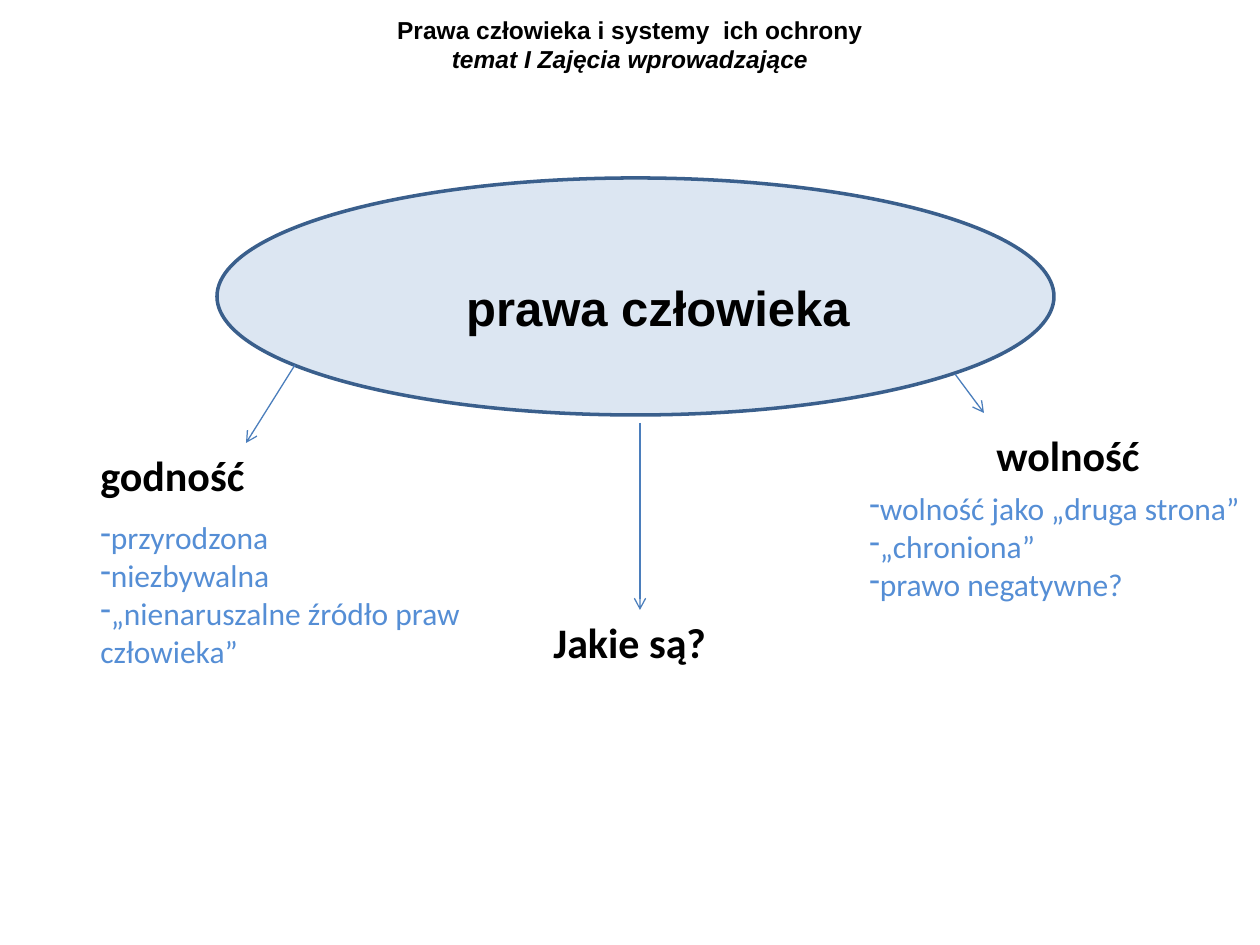
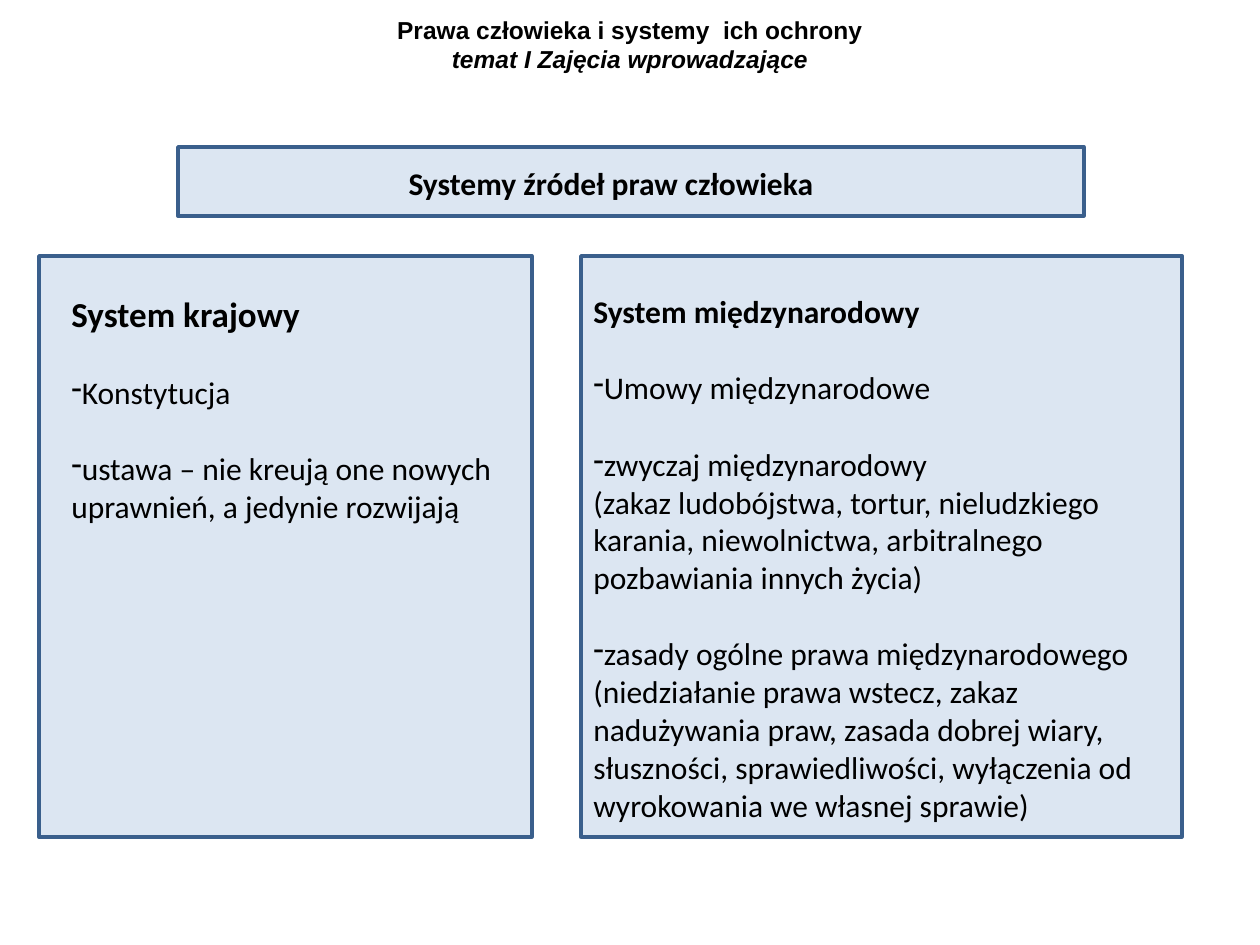
"""Build two slides on human rights: a concept map and the systems of sources."""
import pptx
import pptx.dml.color
import pptx.enum.shapes
import pptx.enum.text
import pptx.oxml.ns
import pptx.util
from lxml import etree

SHAPE = pptx.enum.shapes.MSO_SHAPE
ALIGN = pptx.enum.text.PP_ALIGN
FIT = pptx.enum.text.MSO_AUTO_SIZE
TOP = pptx.enum.text.MSO_ANCHOR.TOP
qn = pptx.oxml.ns.qn
SCALE = 914400 / 126

THEME = {
    "fill": "DCE6F2", "edge": "3A5F8C", "arrow": "4B7EBC",
    "edge_pt": 2, "arrow_pt": 0.75, "gap_pt": 22, "title_top": 15,
    "styles": {
        "title": {"name": "Arial", "size": 14, "bold": True, "italic": False, "color": "000000"},
        "topic": {"name": "Arial", "size": 14, "bold": True, "italic": True, "color": "000000"},
        "core": {"name": "Arial", "size": 28, "bold": True, "color": "000000"},
        "head": {"name": "Calibri", "size": 24, "bold": True, "color": "000000"},
        "large": {"name": "Calibri", "size": 20, "bold": True, "color": "000000"},
        "label": {"name": "Calibri", "size": 18, "bold": True, "color": "000000"},
        "body": {"name": "Calibri", "size": 18, "bold": False, "color": "000000"},
        "note": {"name": "Calibri", "size": 18, "bold": False, "color": "558ED5"},
    },
}

TITLE = [("Prawa człowieka i systemy  ich ochrony", "title"),
         ("temat I Zajęcia wprowadzające", "topic")]

SLIDES = [
    {
        "shapes": [(SHAPE.OVAL, (217, 178, 837, 237))],
        "arrows": [(295, 365, 246, 443), (640, 423, 640, 610), (955, 374, 984, 413)],
        "texts": [
            {"box": (217, 271, 882, 242), "align": ALIGN.CENTER,
             "lines": [("prawa człowieka", "core")]},
            {"box": (88, 443, 413, 63), "lines": [("godność", "head")]},
            {"box": (984, 423, 276, 63), "lines": [("wolność", "head")]},
            {"box": (541, 610, 532, 63), "lines": [("Jakie są?", "head")]},
            {"box": (88, 512, 403, 165), "lines": [
                ("przyrodzona", "note", "dash"),
                ("niezbywalna", "note", "dash"),
                ("„nienaruszalne źródło praw człowieka”", "note", "dash")]},
            {"box": (857, 483, 403, 127), "lines": [
                ("wolność jako „druga strona”", "note", "dash"),
                ("„chroniona”", "note", "dash"),
                ("prawo negatywne?", "note", "dash")]},
        ],
    },
    {
        "shapes": [(SHAPE.RECTANGLE, (178, 147, 906, 69)),
                   (SHAPE.RECTANGLE, (39, 256, 493, 581)),
                   (SHAPE.RECTANGLE, (581, 256, 601, 581))],
        "arrows": [],
        "texts": [
            {"box": (207, 158, 808, 50), "align": ALIGN.CENTER,
             "lines": [("Systemy źródeł praw człowieka", "label")]},
            {"box": (59, 286, 452, 246), "lines": [
                ("System krajowy", "large"),
                ("Konstytucja", "body", "dash", "gap"),
                ("ustawa – nie kreują one nowych uprawnień, a jedynie rozwijają",
                 "body", "dash", "gap")]},
            {"box": (581, 286, 591, 557), "lines": [
                ("System międzynarodowy", "label"),
                ("Umowy międzynarodowe", "body", "dash", "gap"),
                ("zwyczaj międzynarodowy", "body", "dash", "gap"),
                ("(zakaz ludobójstwa, tortur, nieludzkiego karania, niewolnictwa, "
                 "arbitralnego pozbawiania innych życia)", "body"),
                ("zasady ogólne prawa międzynarodowego (niedziałanie prawa wstecz, zakaz "
                 "nadużywania praw, zasada dobrej wiary, słuszności, sprawiedliwości, "
                 "wyłączenia od wyrokowania we własnej sprawie)", "body", "dash", "gap")]},
        ],
    },
]


def px(*nums):
    return [pptx.util.Emu(round(num * SCALE)) for num in nums]


def rgb(code):
    return pptx.dml.color.RGBColor.from_string(code)


def put(item, vals):
    for key, val in vals.items():
        setattr(item, key, val)


def write(para, text, style):
    look = dict(THEME["styles"][style])
    run = para.add_run()
    run.text = text
    run.font.color.rgb = rgb(look.pop("color"))
    look["size"] = pptx.util.Pt(look["size"])
    put(run.font, look)


def dash(para):
    prop = para._p.get_or_add_pPr()
    put_attrs = {"marL": "0", "indent": "0"}
    for key, val in put_attrs.items():
        prop.set(key, val)
    etree.SubElement(prop, qn("a:buFontTx"))
    etree.SubElement(prop, qn("a:buChar")).set("char", "-")


def add_title(slide):
    title = slide.shapes.title
    put(title, dict(zip(("left", "top", "width", "height"), px(0, 0, 1260, 118))))
    frame = title.text_frame
    put(frame, {"auto_size": FIT.NONE, "word_wrap": True, "vertical_anchor": TOP,
                "margin_top": px(THEME["title_top"])[0]})
    para = frame.paragraphs[0]
    para.alignment = ALIGN.CENTER
    for num, line in enumerate(TITLE):
        if num:
            para.add_line_break()
        write(para, *line)


def add_form(slide, kind, box):
    form = slide.shapes.add_shape(kind, *px(*box))
    form.shadow.inherit = False
    form.fill.solid()
    form.fill.fore_color.rgb = rgb(THEME["fill"])
    form.line.color.rgb = rgb(THEME["edge"])
    form.line.width = pptx.util.Pt(THEME["edge_pt"])


def add_arrow(slide, ends):
    kind = pptx.enum.shapes.MSO_CONNECTOR.STRAIGHT
    arrow = slide.shapes.add_connector(kind, *px(*ends))
    arrow.line.color.rgb = rgb(THEME["arrow"])
    arrow.line.width = pptx.util.Pt(THEME["arrow_pt"])
    prop = arrow.element.spPr
    etree.SubElement(prop.find(qn("a:ln")), qn("a:tailEnd")).set("type", "arrow")
    etree.SubElement(prop, qn("a:effectLst"))


def add_text(slide, box, lines, align=ALIGN.LEFT):
    frame = slide.shapes.add_textbox(*px(*box)).text_frame
    put(frame, {"word_wrap": True, "auto_size": FIT.NONE, "vertical_anchor": TOP})
    for num, (text, style, *marks) in enumerate(lines):
        para = frame.add_paragraph() if num else frame.paragraphs[0]
        para.alignment = align
        if "gap" in marks:
            para.space_before = pptx.util.Pt(THEME["gap_pt"])
        if "dash" in marks:
            dash(para)
        write(para, text, style)


def main():
    deck = pptx.Presentation()
    deck.slide_width, deck.slide_height = px(1260, 945)
    for page in SLIDES:
        slide = deck.slides.add_slide(deck.slide_layouts[5])
        add_title(slide)
        for kind, box in page["shapes"]:
            add_form(slide, kind, box)
        for ends in page["arrows"]:
            add_arrow(slide, ends)
        for text in page["texts"]:
            add_text(slide, **text)
    deck.save("out.pptx")


if __name__ == "__main__":
    main()
